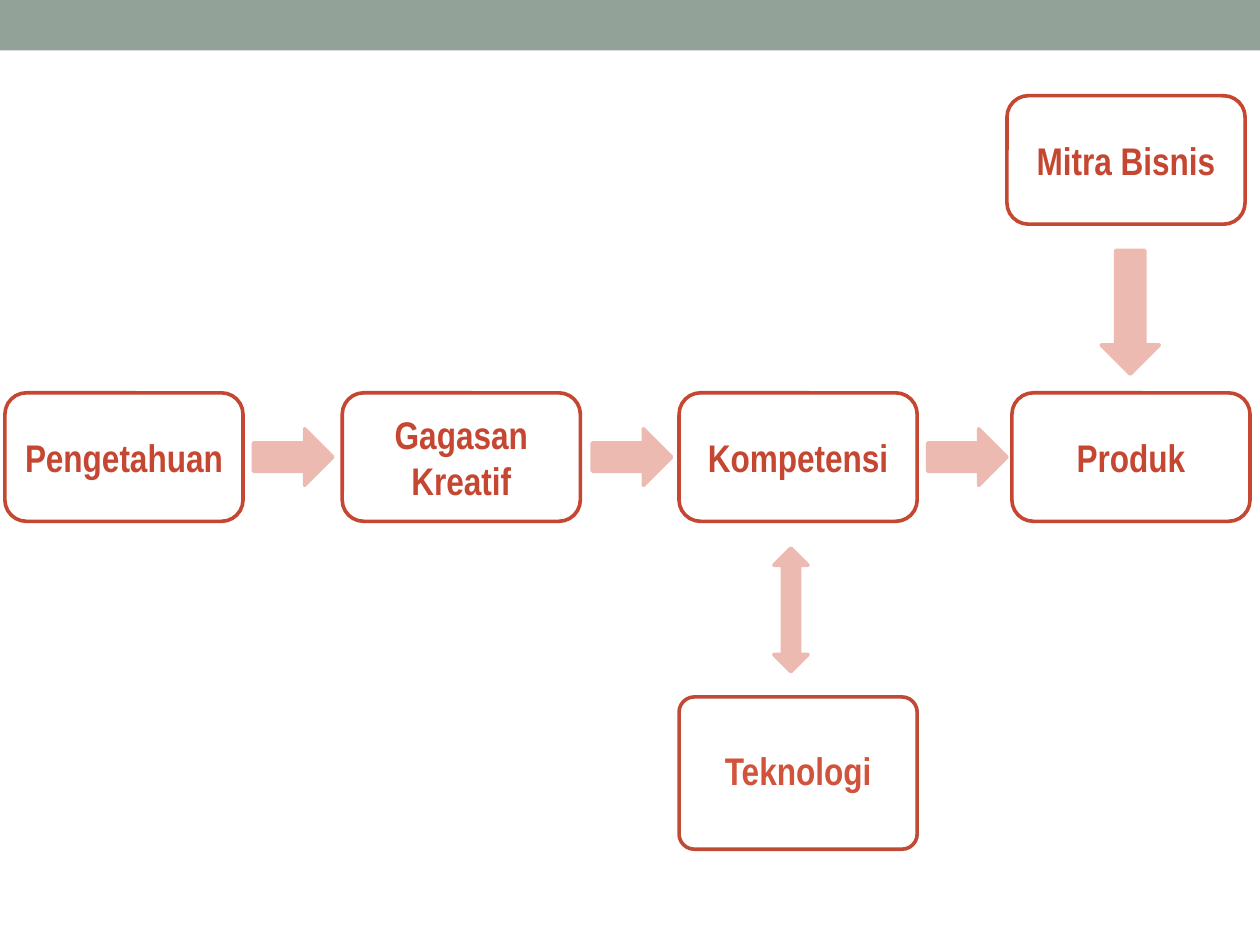
from dataclasses import dataclass

from pptx import Presentation
from pptx.dml.color import RGBColor
from pptx.enum.shapes import MSO_SHAPE
from pptx.enum.text import MSO_ANCHOR, PP_ALIGN
from pptx.util import Cm, Pt

RECT, ROUND = MSO_SHAPE.RECTANGLE, MSO_SHAPE.ROUNDED_RECTANGLE
UP, UP_DOWN = MSO_SHAPE.UP_ARROW, MSO_SHAPE.UP_DOWN_ARROW
MIDDLE, CENTER = MSO_ANCHOR.MIDDLE, PP_ALIGN.CENTER


@dataclass(frozen=True)
class Theme:
    band: str = "93A299"
    box: str = "FFFFFF"
    accent: str = "C54631"
    tech_line: str = "BF4B36"
    tech_text: str = "D2533C"
    arrow: str = "EDBAB1"
    font: str = "Arial Narrow"
    size: float = 22
    line: float = 2.08


T = Theme()


def add_block(kind, x, y, w, h, fill, line=None, rotation=0):
    sp = s.shapes.add_shape(kind, Cm(x), Cm(y), Cm(w), Cm(h))
    sp.shadow.inherit = False
    sp.rotation = rotation
    sp.fill.solid()
    sp.fill.fore_color.rgb = RGBColor.from_string(fill)
    if line:
        sp.line.color.rgb = RGBColor.from_string(line)
        sp.line.width = Pt(T.line)
    else:
        sp.line.fill.background()
    return sp


def write(sp, text, color=T.accent, spacing=1.0):
    tf = sp.text_frame
    tf.word_wrap = True
    tf.vertical_anchor = MIDDLE
    p = tf.paragraphs[0]
    p.alignment = CENTER
    p.line_spacing = spacing
    r = p.add_run()
    r.text = text
    r.font.name = T.font
    r.font.size = Pt(T.size)
    r.font.bold = True
    r.font.color.rgb = RGBColor.from_string(color)


prs = Presentation()
prs.slide_width, prs.slide_height = Cm(25.4), Cm(19.05)
s = prs.slides.add_slide(prs.slide_layouts[6])

# Top band
add_block(RECT, 0, 0, 25.4, 1.02, T.band)

# Technology, linked both ways with competence
add_block(UP_DOWN, 15.6, 11.05, 0.69, 2.49, T.arrow, T.arrow)
tech = add_block(ROUND, 13.69, 14.05, 4.8, 3.07, T.box, T.tech_line)
tech.adjustments[0] = 0.1
write(tech, "Teknologi", color=T.tech_text, spacing=0.9)

# Business partner arrow, pointing down to the product
add_block(UP, 22.2, 5.05, 1.17, 2.49, T.arrow, T.arrow, rotation=180)

# Main row and business partner
BOX_W, BOX_H, ROW_Y = 4.8, 2.59, 7.92
boxes = [
    ("Pengetahuan", 0.1, ROW_Y),
    ("Gagasan Kreatif", 6.9, ROW_Y),
    ("Kompetensi", 13.69, ROW_Y),
    ("Produk", 20.4, ROW_Y),
    ("Mitra Bisnis", 20.3, 1.93),
]
for text, x, y in boxes:
    write(add_block(ROUND, x, y, BOX_W, BOX_H, T.box, T.accent), text)

# Arrows between the boxes of the row, turned to point right
ARROW_W, ARROW_H = 1.14, 1.6
arrow_y = ROW_Y + (BOX_H - ARROW_H) / 2
for x in (5.34, 12.17, 18.93):
    add_block(UP, x, arrow_y, ARROW_W, ARROW_H, T.arrow, T.arrow, rotation=90)

prs.save("out.pptx")
